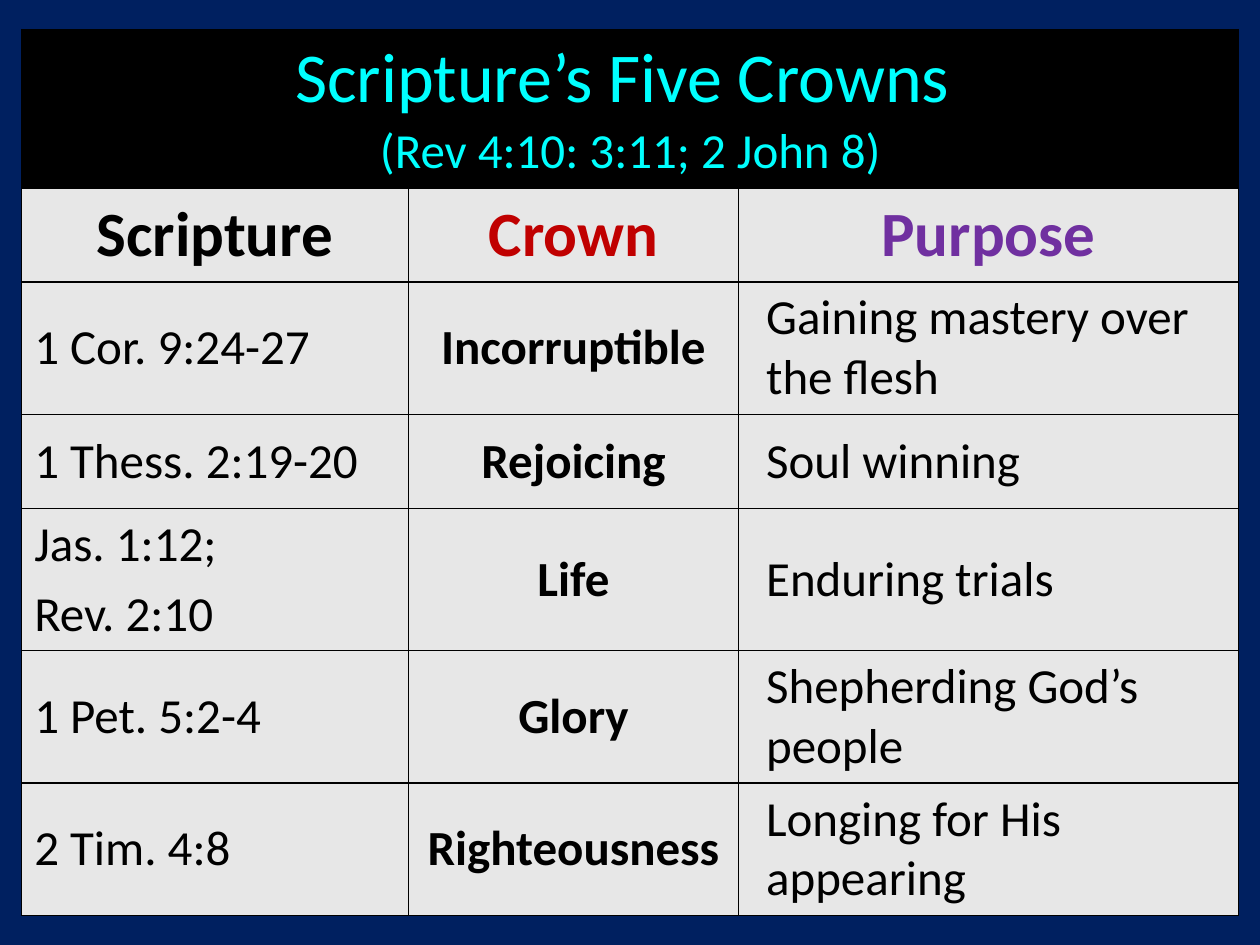
from lxml.etree import SubElement
from pptx import Presentation
from pptx.dml.color import RGBColor
from pptx.enum.text import MSO_ANCHOR as Anchor, PP_ALIGN as Align
from pptx.oxml.ns import qn
from pptx.util import Pt

NAVY, BLACK, GREY, CYAN = "002060", "000000", "E7E7E7", "00FFFF"
RED, PURPLE = "C00000", "7030A0"
COL_WIDTHS = [221, 188.6, 285.9]
ROW_HEIGHTS = [90.5, 53.75, 75.6, 53.75, 81.2, 75.6, 75.6]

HEADINGS = [("Scripture", BLACK), ("Crown", RED), ("Purpose", PURPLE)]
CROWNS = [
    ("1 Cor. 9:24-27", "Incorruptible", "Gaining mastery over the flesh"),
    ("1 Thess. 2:19-20", "Rejoicing", "Soul winning"),
    ("Jas. 1:12;\nRev. 2:10", "Life", "Enduring trials"),
    ("1 Pet. 5:2-4", "Glory", "Shepherding God’s people"),
    ("2 Tim. 4:8", "Righteousness", "Longing for His appearing"),
]


def rgb(value):
    return RGBColor.from_string(value)


def add_text(p, text, size=28, color=BLACK, bold=False, align=Align.LEFT, indent=0):
    p.alignment = align
    if indent:
        p._p.get_or_add_pPr().set("marL", str(Pt(indent)))
    r = p.add_run()
    r.text = text
    font = r.font
    font.name, font.size, font.bold = "Calibri", Pt(size), bold
    font.color.rgb = rgb(color)


def format_cell(cell, fill):
    # Borders come before the fill in the cell properties
    props = cell._tc.get_or_add_tcPr()
    for side in ("lnL", "lnR", "lnT", "lnB"):
        line = SubElement(props, qn(f"a:{side}"), w=str(Pt(1)))
        solid = SubElement(line, qn("a:solidFill"))
        SubElement(solid, qn("a:srgbClr"), val=BLACK)
    cell.fill.solid()
    cell.fill.fore_color.rgb = rgb(fill)
    cell.vertical_anchor = Anchor.MIDDLE


def fill_cell(cell, text, **style):
    tf = cell.text_frame
    for i, line in enumerate(text.split("\n")):
        p = tf.add_paragraph() if i else tf.paragraphs[0]
        if i:
            p.space_before = Pt(5.6)
        add_text(p, line, **style)


def add_grid(slide):
    frame = slide.shapes.add_table(len(ROW_HEIGHTS), len(COL_WIDTHS), Pt(12.4), Pt(16.9),
                                   Pt(sum(COL_WIDTHS)), Pt(sum(ROW_HEIGHTS)))
    table = frame.table
    table.first_row = table.horz_banding = False
    for col, width in zip(table.columns, COL_WIDTHS):
        col.width = Pt(width)
    for i, (row, height) in enumerate(zip(table.rows, ROW_HEIGHTS)):
        row.height = Pt(height)
        for cell in row.cells:
            format_cell(cell, GREY if i else BLACK)
    table.cell(0, 0).merge(table.cell(0, len(COL_WIDTHS) - 1))
    return table


def main():
    prs = Presentation()
    prs.slide_width, prs.slide_height = Pt(720), Pt(540)
    slide = prs.slides.add_slide(prs.slide_layouts[6])
    slide.background.fill.solid()
    slide.background.fill.fore_color.rgb = rgb(NAVY)
    table = add_grid(slide)

    # Title band
    p = table.cell(0, 0).text_frame.paragraphs[0]
    add_text(p, "Scripture’s Five Crowns ", size=40, color=CYAN, align=Align.CENTER)
    p.add_line_break()
    add_text(p, "(Rev 4:10: 3:11; 2 John 8)", color=CYAN, align=Align.CENTER)

    # Column headings
    for col, (text, color) in enumerate(HEADINGS):
        fill_cell(table.cell(1, col), text, size=36, color=color, bold=True,
                  align=Align.CENTER)

    # One row per crown
    styles = [{}, {"bold": True, "align": Align.CENTER}, {"indent": 8.64}]
    for row, texts in enumerate(CROWNS, start=2):
        for col, (text, style) in enumerate(zip(texts, styles)):
            fill_cell(table.cell(row, col), text, **style)

    prs.save("out.pptx")


if __name__ == "__main__":
    main()
